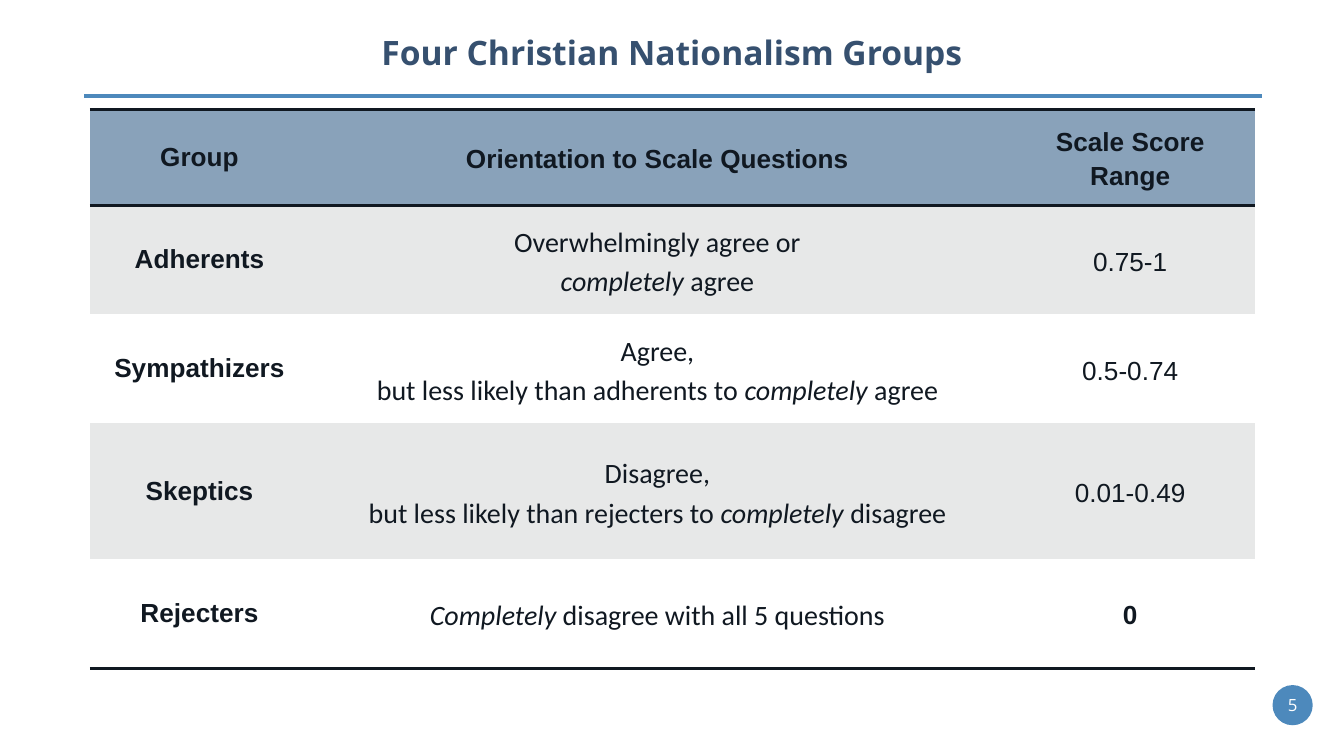
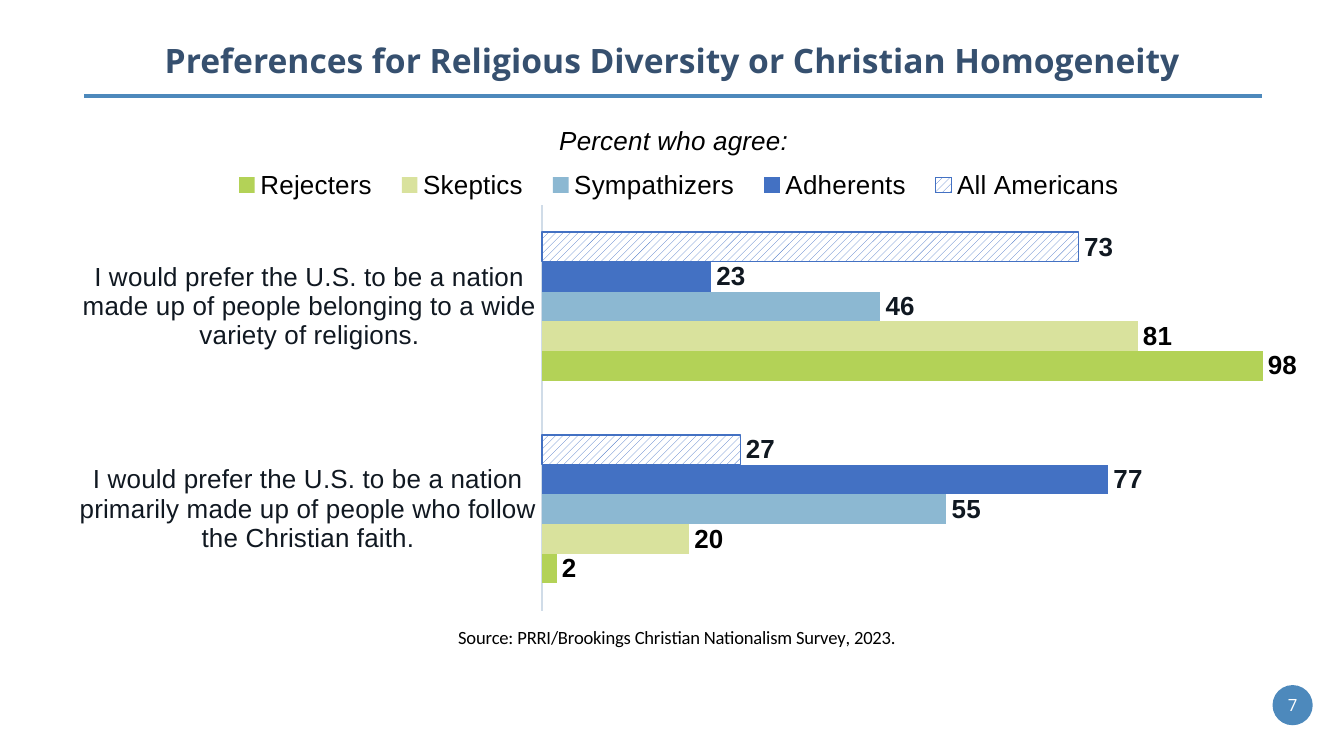
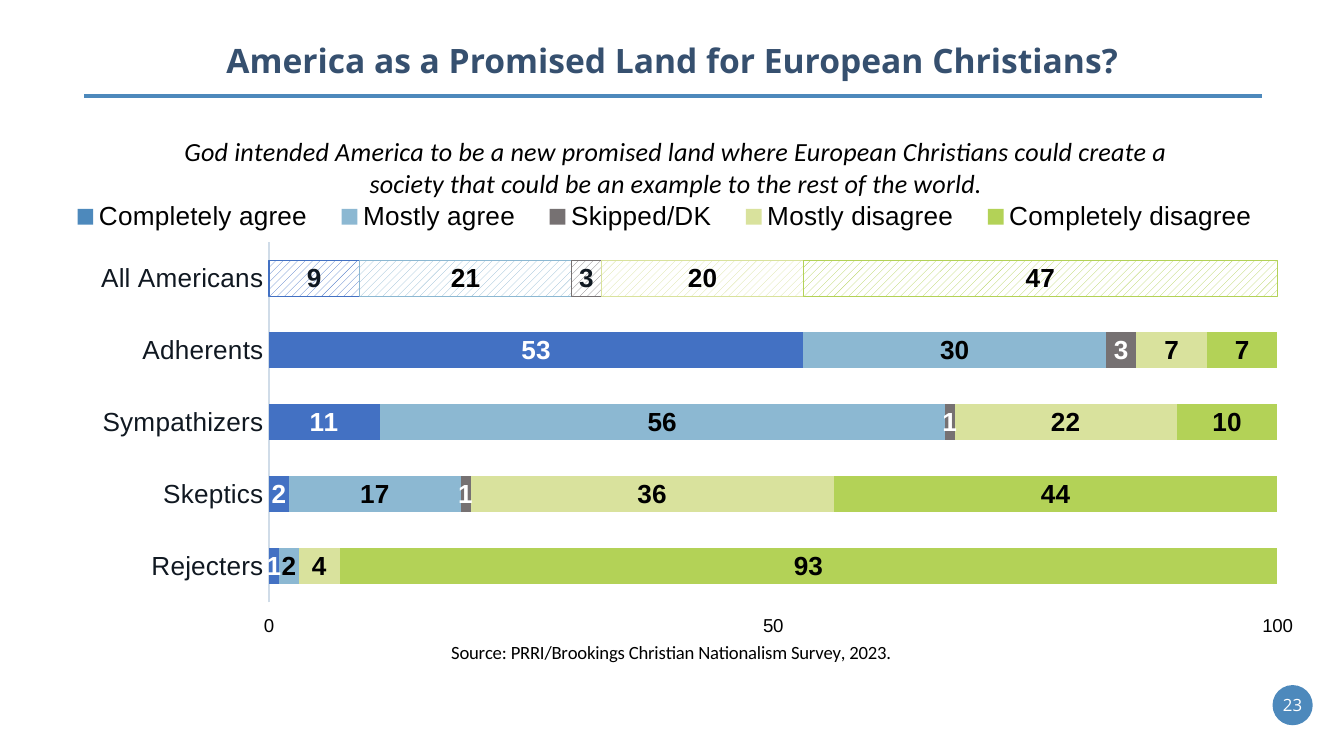
from dataclasses import dataclass

from lxml.etree import SubElement
from pptx import Presentation
from pptx.chart.data import CategoryChartData
from pptx.dml.color import RGBColor
from pptx.enum.chart import (XL_CHART_TYPE, XL_LABEL_POSITION, XL_LEGEND_POSITION,
                             XL_TICK_LABEL_POSITION, XL_TICK_MARK)
from pptx.enum.dml import MSO_PATTERN
from pptx.enum.shapes import MSO_CONNECTOR, MSO_SHAPE
from pptx.enum.text import MSO_ANCHOR, MSO_AUTO_SIZE, PP_ALIGN
from pptx.oxml.ns import qn
from pptx.util import Cm, Pt


@dataclass(frozen=True)
class Theme:
    accent: str = "4D89BC"
    title: str = "36506F"
    ink: str = "101821"
    black: str = "000000"
    white: str = "FFFFFF"
    head: str = "89A2BA"
    band: str = "E7E8E8"
    axis: str = "D0DCE8"
    blue: str = "4371C3"
    sky: str = "8CB8D2"
    gray: str = "767172"
    pale: str = "D9E29D"
    lime: str = "B3D257"
    display: str = "Open Sans"
    sans: str = "Arial"
    body: str = "Calibri"
    big: int = 18
    mid: int = 15
    base: int = 14
    small: int = 10
    tiny: int = 9


T = Theme()
PLAIN = "{2D5ABB26-0587-4C30-8999-92F81FD0307C}"
SOURCE = "Source: PRRI/Brookings Christian Nationalism Survey, 2023."
TITLE = (0.43, 0.69, 24.56, 0.89)


def put(item, **vals):
    for key, val in vals.items():
        setattr(item, key, val)


def style(font, size, color, name, **more):
    put(font, size=Pt(size), name=name, **more)
    font.color.rgb = RGBColor.from_string(color)


def paint(fill, color):
    fill.solid()
    fill.fore_color.rgb = RGBColor.from_string(color)


def hatch(form, color):
    """Fill with wide diagonal stripes and a thin outline."""
    form.fill.patterned()
    put(form.fill, pattern=MSO_PATTERN.WIDE_UPWARD_DIAGONAL)
    form.fill.fore_color.rgb = RGBColor.from_string(color)
    form.fill.back_color.rgb = RGBColor.from_string(T.white)
    paint(form.line.fill, color)
    form.line.width = Pt(0.75)


def frame(slide, title, page, box):
    """Add the title, the rule below it and the page badge."""
    head = slide.shapes.title
    left, top, width, height = map(Cm, box)
    put(head, left=left, top=top, width=width, height=height)
    text = head.text_frame
    put(text, text=title, word_wrap=True, auto_size=MSO_AUTO_SIZE.NONE,
        vertical_anchor=MSO_ANCHOR.MIDDLE, margin_left=0, margin_right=0,
        margin_top=Cm(0.1), margin_bottom=Cm(0.1))
    para = text.paragraphs[0]
    para.alignment = PP_ALIGN.CENTER
    style(para.font, T.big, T.title, T.display, bold=True)

    rule = slide.shapes.add_connector(
        MSO_CONNECTOR.STRAIGHT, Cm(23.85), Cm(1.82), Cm(1.59), Cm(1.82))
    paint(rule.line.fill, T.accent)
    rule.line.width = Pt(2)
    SubElement(rule._element.spPr, qn("a:effectLst"))

    badge = slide.shapes.add_shape(
        MSO_SHAPE.ROUNDED_RECTANGLE, Cm(24.05), Cm(12.95), Cm(0.76), Cm(0.76))
    badge.adjustments[0] = 0.5
    badge.shadow.inherit = False
    paint(badge.fill, T.accent)
    badge.line.fill.background()
    text = badge.text_frame
    put(text, text=str(page), word_wrap=False, vertical_anchor=MSO_ANCHOR.MIDDLE,
        margin_left=0, margin_right=0, margin_top=0, margin_bottom=0)
    para = text.paragraphs[0]
    para.alignment = PP_ALIGN.CENTER
    style(para.font, T.tiny, T.white, T.display)


def edge(cell, side):
    line = SubElement(cell._tc.get_or_add_tcPr(), qn(f"a:ln{side}"), w=str(Pt(2)))
    SubElement(SubElement(line, qn("a:solidFill")), qn("a:srgbClr"), val=T.ink)


def write(cell, text, spacing, *look, **more):
    """Write lines of text, where *stars* mark italics."""
    cell.vertical_anchor = MSO_ANCHOR.MIDDLE
    for num, line in enumerate(text.split("\n")):
        body = cell.text_frame
        para = body.add_paragraph() if num else body.paragraphs[0]
        put(para, alignment=PP_ALIGN.CENTER, line_spacing=spacing)
        for pos, part in enumerate(line.split("*")):
            if part:
                run = para.add_run()
                run.text = part
                style(run.font, *look, italic=pos % 2 == 1, **more)


def grid(slide, rows, box, widths, heights):
    left, top = map(Cm, box)
    table = slide.shapes.add_table(len(rows), len(widths), left, top,
                                   Cm(sum(widths)), Cm(sum(heights))).table
    put(table, first_row=False, horz_banding=False)
    table._tbl.tblPr.find(qn("a:tableStyleId")).text = PLAIN
    for col, width in zip(table.columns, widths):
        col.width = Cm(width)
    for row, height in zip(table.rows, heights):
        row.height = Cm(height)
    last = len(rows) - 1
    for r, row in enumerate(rows):
        for c, text in enumerate(row):
            cell = table.cell(r, c)
            prose = r > 0 and c == 1
            if c:
                put(cell, margin_left=Cm(0.18), margin_right=Cm(0.18),
                    margin_top=0, margin_bottom=0)
            write(cell, text, 1.15 if c else 1.0,
                  T.mid if prose else T.base, T.ink, T.body if prose else T.sans,
                  bold=r == 0 or c == 0 or text == "0")
            if r == 0:
                edge(cell, "T")
            if r in (0, last):
                edge(cell, "B")
            paint(cell.fill, T.head if r == 0 else T.band if r % 2 else T.white)


def place(chart, route, spot, index, inner=False):
    """Set a fixed place, in shares of the chart, for one of its parts."""
    part = chart._chartSpace.xpath(route)[0]
    layout = part.find(qn("c:layout"))
    if layout is None:
        layout = SubElement(part, qn("c:layout"))
        part.insert(index, layout)
    manual = SubElement(layout, qn("c:manualLayout"))
    vals = {"layoutTarget": "inner"} if inner else {}
    vals |= {"xMode": "edge", "yMode": "edge"}
    vals |= dict(zip("xywh", spot))
    for key, val in vals.items():
        SubElement(manual, qn(f"c:{key}"), val=str(val))


def caption(holder, text, *look, **more):
    para = holder.text_frame.paragraphs[0]
    run = para.add_run()
    run.text = text
    style(run.font, *look, **more)


def bars(slide, kind, box, cats, series, title, face, gap, spots, ticks):
    """Add a bar chart with fixed places for plot, title, legend and source."""
    data = CategoryChartData()
    data.categories = cats
    for name, vals, *_ in series:
        data.add_series(name, vals)
    chart = slide.shapes.add_chart(kind, *map(Cm, box), data).chart
    style(chart.font, T.base, T.black, T.body)
    chart.has_title = True
    caption(chart.chart_title, title, T.base, T.black, face, italic=True, bold=False)

    put(chart, has_legend=True)
    put(chart.legend, position=XL_LEGEND_POSITION.TOP, include_in_layout=False)
    style(chart.legend.font, T.base, T.black, T.sans)

    axis = chart.category_axis
    put(axis, reverse_order=True, major_tick_mark=XL_TICK_MARK.NONE)
    style(axis.tick_labels.font, T.base, T.ink, T.sans)
    paint(axis.format.line.fill, T.axis)
    axis.format.line.width = Pt(0.75)

    # The categories run downwards, so the high side of the scale is the bottom.
    side = XL_TICK_LABEL_POSITION.HIGH if ticks else XL_TICK_LABEL_POSITION.NONE
    scale = chart.value_axis
    put(scale, minimum_scale=0, maximum_scale=100, major_unit=50, has_title=True,
        has_major_gridlines=False, major_tick_mark=XL_TICK_MARK.NONE,
        tick_label_position=side)
    style(scale.tick_labels.font, T.small, T.black, T.sans)
    scale.format.line.fill.background()
    caption(scale.axis_title, SOURCE, T.small, T.black, T.body, bold=False)

    plot = chart.plots[0]
    put(plot, gap_width=gap, vary_by_categories=False)
    stack = kind == XL_CHART_TYPE.BAR_STACKED
    spot = XL_LABEL_POSITION.CENTER if stack else XL_LABEL_POSITION.OUTSIDE_END
    for item, (_, _, color, ink) in zip(plot.series, series):
        paint(item.format.fill, color)
        labels = item.data_labels
        put(labels, show_value=True, position=spot,
            number_format="0;;;", number_format_is_linked=False)
        style(labels.font, T.base, ink, T.sans, bold=True)

    place(chart, "c:chart/c:plotArea", spots["plot"], 0, inner=True)
    place(chart, "c:chart/c:title", spots["title"], 1)
    place(chart, "c:chart/c:legend", spots["legend"], 1)
    place(chart, ".//c:valAx/c:title", spots["source"], 1)
    return plot


def groups(slide):
    frame(slide, "Four Christian Nationalism Groups", 5, (0, 0.38, 25.4, 1.22))
    rows = [
        ("Group", "Orientation to Scale Questions", "Scale Score Range"),
        ("Adherents", "Overwhelmingly agree or\n*completely* agree", "0.75-1"),
        ("Sympathizers",
         "Agree,\nbut less likely than adherents to *completely* agree", "0.5-0.74"),
        ("Skeptics",
         "Disagree,\nbut less likely than rejecters to *completely* disagree", "0.01-0.49"),
        ("Rejecters", "*Completely* disagree with all 5 questions", "0"),
    ]
    grid(slide, rows, (1.7, 2.07), (4.14, 13.17, 4.7), (1.81, 2.06, 2.06, 2.57, 2.06))


def diversity(slide):
    frame(slide, "Preferences for Religious Diversity or Christian Homogeneity", 7, TITLE)
    stem = "I would prefer the U.S. to be a nation "
    cats = [stem + "made up of people belonging to a wide variety of religions.",
            stem + "primarily made up of people who follow the Christian faith."]
    series = [
        ("All Americans", (73, 27), T.blue, T.ink),
        ("Adherents", (23, 77), T.blue, T.ink),
        ("Sympathizers", (46, 55), T.sky, T.ink),
        ("Skeptics", (81, 20), T.pale, T.black),
        ("Rejecters", (98, 2), T.lime, T.black),
    ]
    spots = {"plot": (0.4, 0.17, 0.59, 0.71), "title": (0.41, 0.02),
             "legend": (0.14, 0.1, 0.74, 0.07), "source": (0.33, 0.9)}
    plot = bars(slide, XL_CHART_TYPE.BAR_CLUSTERED, (0.82, 2.04, 23.7, 10.8), cats,
                series, "Percent who agree:", T.sans, 182, spots, False)
    hatch(plot.series[0].format, T.blue)


def promise(slide):
    frame(slide, "America as a Promised Land for European Christians?", 23, TITLE)
    cats = ["All Americans", "Adherents", "Sympathizers", "Skeptics", "Rejecters"]
    series = [
        ("Completely agree", (9, 53, 11, 2, 1), T.accent, T.white),
        ("Mostly agree", (21, 30, 56, 17, 2), T.sky, T.black),
        ("Skipped/DK", (3, 3, 1, 1, 0), T.gray, T.white),
        ("Mostly disagree", (20, 7, 22, 36, 4), T.pale, T.black),
        ("Completely disagree", (47, 7, 10, 44, 93), T.lime, T.black),
    ]
    title = ("God intended America to be a new promised land where European Christians "
             "could create a society that could be an example to the rest of the world.")
    spots = {"plot": (0.18, 0.23, 0.79, 0.63), "title": (0.11, 0.03),
             "legend": (0.01, 0.15, 0.96, 0.07), "source": (0.32, 0.92)}
    plot = bars(slide, XL_CHART_TYPE.BAR_STACKED, (0.74, 2.1, 24.13, 10.8), cats,
                series, title, T.body, 100, spots, True)
    first = plot.series[0]
    for num in range(1, len(cats)):
        paint(first.points[num].format.fill, T.blue)
    for item, (_, _, color, ink) in zip(plot.series, series):
        point = item.points[0]
        hatch(point.format, T.blue if color == T.accent else color)
        if ink == T.white:
            style(point.data_label.font, T.base, T.ink, T.sans, bold=True)


def main():
    deck = Presentation()
    put(deck, slide_width=Cm(25.4), slide_height=Cm(14.29))
    for build in (groups, diversity, promise):
        build(deck.slides.add_slide(deck.slide_layouts[5]))
    deck.save("out.pptx")


if __name__ == "__main__":
    main()
